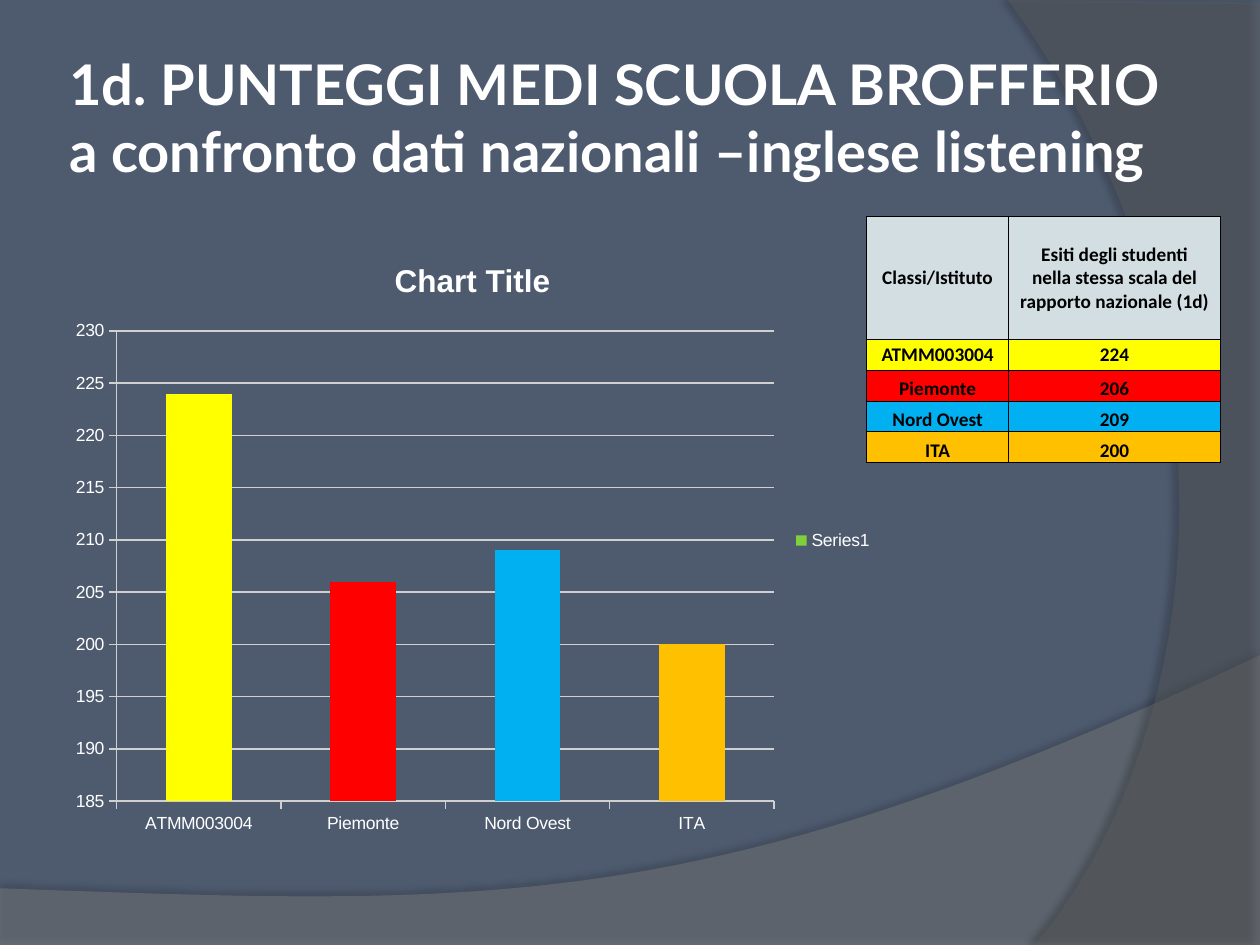
from lxml import etree
from pptx import Presentation
from pptx.chart.data import CategoryChartData
from pptx.dml.color import RGBColor
from pptx.enum import chart as charts, text
from pptx.oxml import parse_xml
from pptx.oxml.ns import nsdecls, qn
from pptx.util import Inches, Pt

WHITE, BLACK = "FFFFFF", "000000"
HEADERS = ("Classi/Istituto",
           "Esiti degli studenti\nnella stessa scala del\nrapporto nazionale (1d)")
SCORES = (("ATMM003004", 224, "FFFF00"), ("Piemonte", 206, "FF0000"),
          ("Nord Ovest", 209, "00B0F0"), ("ITA", 200, "FFC000"))


def color(value):
    return RGBColor.from_string(value)


def paint(fill, value):
    fill.solid()
    fill.fore_color.rgb = color(value)


def set_all(target, **values):
    for name, value in values.items():
        setattr(target, name, value)


def style_font(font, value, **values):
    set_all(font, **values)
    font.color.rgb = color(value)


def write(frame, words, value, align, **values):
    paragraph = frame.paragraphs[0]
    paragraph.text = words
    paragraph.alignment = align
    for run in paragraph.runs:
        style_font(run.font, value, **values)


def curve(start, first, second, end, steps=48):
    weights = [((1 - t) ** 3, 3 * t * (1 - t) ** 2, 3 * t * t * (1 - t), t ** 3)
               for t in (step / steps for step in range(steps + 1))]
    return [tuple(sum(w * point[axis] for w, point in zip(weight, (start, first, second, end)))
                  for axis in (0, 1)) for weight in weights]


def add_wave(slide, points, fill, opacity, shadow):
    vertices = [(Inches(x), Inches(y)) for x, y in points]
    builder = slide.shapes.build_freeform(*vertices[0], scale=1.0)
    builder.add_line_segments(vertices[1:], close=True)
    shape = builder.convert_to_shape()
    paint(shape.fill, fill)
    shape.line.fill.background()
    shape.shadow.inherit = False
    tint = shape.element.spPr.find(qn("a:solidFill"))[0]
    etree.SubElement(tint, qn("a:alpha")).set("val", str(opacity * 1000))
    strength, blur, distance, angle = shadow
    effects = shape.element.spPr.find(qn("a:effectLst"))
    effects.append(parse_xml(
        f'<a:outerShdw {nsdecls("a")} blurRad="{Pt(blur)}" dist="{Pt(distance)}" '
        f'dir="{angle * 60000}" algn="ctr" rotWithShape="0"><a:srgbClr val="{BLACK}">'
        f'<a:alpha val="{strength * 1000}"/></a:srgbClr></a:outerShdw>'))


def add_background(slide):
    paint(slide.background.fill, "4E5B6F")
    bottom = [(0, 7.51), (10, 7.51)] + curve((10, 5.2), (5.59, 7.29), (3.91, 7.19), (0, 7.05))
    right = [(10, 0.02), (10, 7.5)] + curve((8.21, 7.5), (9.35, 6.19), (10.18, 3), (8, 0))
    add_wave(slide, bottom, "7F7F7F", 45, (35, 4, 3.5, 270))
    add_wave(slide, right, "5E5E5E", 40, (45, 4, 4, 180))


def add_title(slide, left, top, width, height):
    frame = slide.shapes.add_textbox(left, top, width, height).text_frame
    inset = Inches(0.05)
    set_all(frame, word_wrap=True, vertical_anchor=text.MSO_ANCHOR.MIDDLE,
            margin_left=inset, margin_right=inset, margin_top=inset, margin_bottom=inset)
    write(frame, "1d. PUNTEGGI MEDI SCUOLA BROFFERIO\n"
                 "a confronto dati nazionali –inglese listening",
          WHITE, text.PP_ALIGN.LEFT, name="Lato", size=Pt(32), bold=True)


def add_borders(cell):
    properties = cell._tc.get_or_add_tcPr()
    for index, side in enumerate(("lnL", "lnR", "lnT", "lnB")):
        properties.insert(index, parse_xml(
            f'<a:{side} {nsdecls("a")} w="{Pt(0.5)}"><a:solidFill>'
            f'<a:srgbClr val="{BLACK}"/></a:solidFill></a:{side}>'))


def add_scores_table(slide, left, top, width, height):
    rows = [(*HEADERS, "D3DEE2"), *SCORES]
    table = slide.shapes.add_table(len(rows), 2, left, top, width, height).table
    header_height = height // 2
    for index, row in enumerate(table.rows):
        row.height = (height - header_height) // len(SCORES) if index else header_height
    for column, share in zip(table.columns, (0.4, 0.6)):
        column.width = int(width * share)
    for index, (*words, fill) in enumerate(rows):
        anchor = text.MSO_ANCHOR.BOTTOM if index > 1 else text.MSO_ANCHOR.MIDDLE
        for cell, word in zip(table.rows[index].cells, words):
            set_all(cell, vertical_anchor=anchor, margin_left=0, margin_right=0,
                    margin_top=0, margin_bottom=0)
            write(cell.text_frame, str(word), BLACK, text.PP_ALIGN.CENTER,
                  name="Calibri", size=Pt(11), bold=True)
            paint(cell.fill, fill)
            add_borders(cell)


def add_scores_chart(slide, left, top, width, height):
    data = CategoryChartData(number_format="0")
    names, values, fills = zip(*SCORES)
    data.categories = names
    data.add_series("Series1", values)
    chart = slide.shapes.add_chart(charts.XL_CHART_TYPE.COLUMN_CLUSTERED,
                                   left, top, width, height, data).chart
    style_font(chart.font, WHITE, name="Arial", size=Pt(10))
    chart.has_title = True
    write(chart.chart_title.text_frame, "Chart Title", WHITE, text.PP_ALIGN.CENTER,
          name="Arial", size=Pt(18), bold=True)
    chart.has_legend = True
    set_all(chart.legend, position=charts.XL_LEGEND_POSITION.RIGHT, include_in_layout=False)
    set_all(chart.value_axis, minimum_scale=185, maximum_scale=230, major_unit=5,
            has_major_gridlines=True)
    for axis in (chart.category_axis, chart.value_axis):
        axis.major_tick_mark = charts.XL_TICK_MARK.OUTSIDE
    for axis_part in (chart.category_axis, chart.value_axis, chart.value_axis.major_gridlines):
        style_line = axis_part.format.line
        style_line.color.rgb = color("D0D0D0")
        style_line.width = Pt(0.75)
    plot = chart.plots[0]
    set_all(plot, gap_width=150, vary_by_categories=False)
    series = plot.series[0]
    paint(series.format.fill, "7FD13B")
    for index, fill in enumerate(fills):
        paint(series.points[index].format.fill, fill)


def main():
    presentation = Presentation()
    set_all(presentation, slide_width=Inches(10), slide_height=Inches(7.5))
    slide = presentation.slides.add_slide(presentation.slide_layouts[6])
    add_background(slide)
    add_title(slide, Inches(0.5), Inches(0.3), Inches(9.34), Inches(1.25))
    add_scores_table(slide, Inches(6.88), Inches(1.72), Inches(2.81), Inches(1.95))
    add_scores_chart(slide, Inches(0.47), Inches(1.87), Inches(6.56), Inches(4.84))
    presentation.save("out.pptx")


if __name__ == "__main__":
    main()
